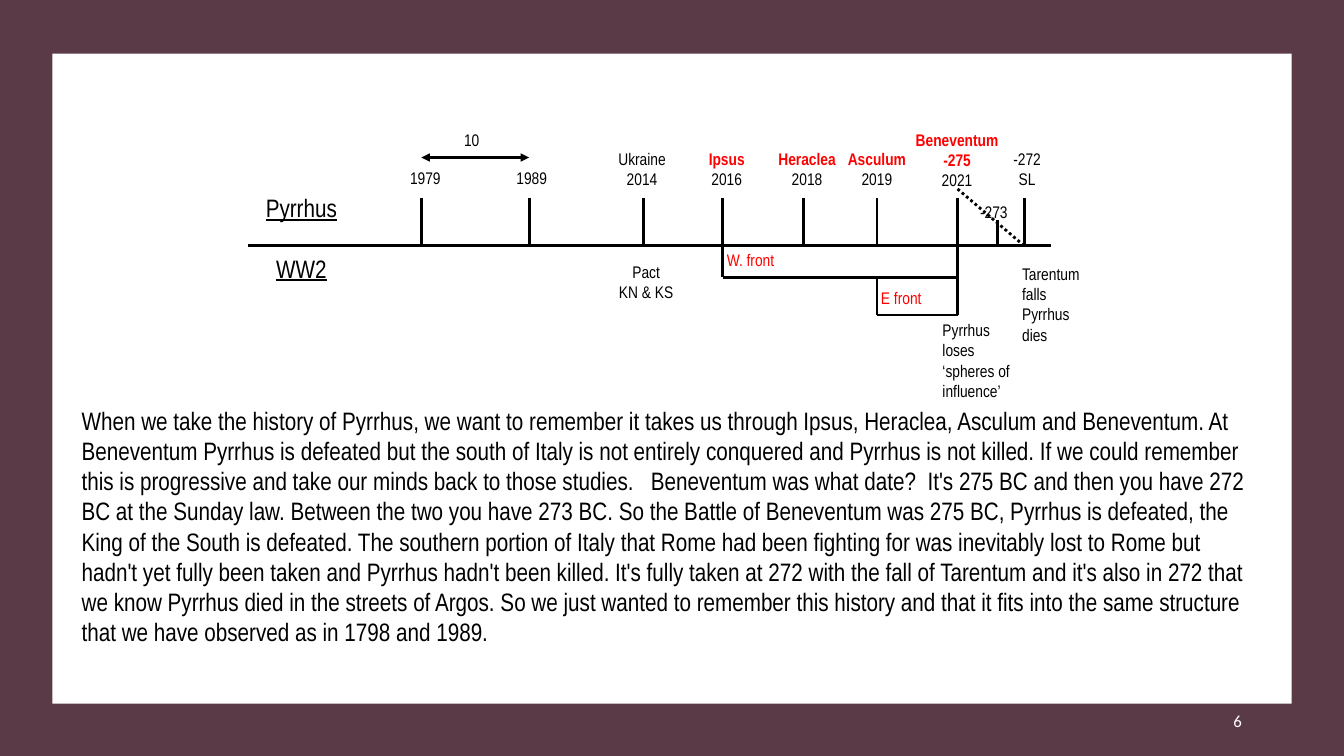
from lxml.etree import SubElement
from pptx import Presentation
from pptx.dml.color import RGBColor
from pptx.enum.dml import MSO_LINE
from pptx.enum.shapes import MSO_CONNECTOR, MSO_SHAPE
from pptx.enum.text import MSO_ANCHOR, PP_ALIGN
from pptx.oxml.ns import qn
from pptx.util import Inches, Pt

BLACK, WHITE, RED, PLUM = "000000", "FFFFFF", "FF0000", "5B3A47"

presentation = Presentation()
presentation.slide_width = Inches(13.33)
presentation.slide_height = Inches(7.5)
slide = presentation.slides.add_slide(presentation.slide_layouts[6])
column = presentation.slide_width / 200
row = presentation.slide_height / 120


def add_text(text, left, top, width, height, size=12, color=BLACK, font="Arial Narrow",
             align=PP_ALIGN.CENTER, anchor=MSO_ANCHOR.TOP, inset=(0.6, 0.6),
             red_lines=0, underline=False, gap=0):
    box = slide.shapes.add_textbox(int(left * column), int(top * row),
                                   int(width * column), int(height * row))
    frame = box.text_frame
    frame.word_wrap = True
    frame.vertical_anchor = anchor
    frame.margin_left = frame.margin_right = int(inset[0] * column)
    frame.margin_top = frame.margin_bottom = int(inset[1] * row)
    for index, line in enumerate(text.split("\n")):
        paragraph = frame.paragraphs[0] if index == 0 else frame.add_paragraph()
        paragraph.alignment = align
        paragraph.space_before = Pt(gap if index else 0)
        run = paragraph.add_run()
        run.text = line
        run.font.name = font
        run.font.size = Pt(size)
        run.font.bold = index < red_lines
        run.font.underline = underline
        run.font.color.rgb = RGBColor.from_string(RED if index < red_lines else color)


def add_line(start_x, start_y, end_x, end_y, dash=None, arrows=False):
    connector = slide.shapes.add_connector(
        MSO_CONNECTOR.STRAIGHT, int(start_x * column), int(start_y * row),
        int(end_x * column), int(end_y * row))
    connector.line.color.rgb = RGBColor.from_string(BLACK)
    connector.line.width = Pt(2)
    if dash:
        connector.line.dash_style = dash
    if arrows:
        for end in ("a:headEnd", "a:tailEnd"):
            SubElement(connector._element.spPr.find(qn("a:ln")), qn(end), type="triangle")
    SubElement(connector._element.spPr, qn("a:effectLst"))


panels = [(0, 0, 200, 120, PLUM), (7.8, 8.5, 184.4, 103.2, WHITE)]
for left, top, width, height, color in panels:
    panel = slide.shapes.add_shape(MSO_SHAPE.RECTANGLE, int(left * column), int(top * row),
                                   int(width * column), int(height * row))
    panel.shadow.inherit = False
    panel.fill.solid()
    panel.fill.fore_color.rgb = RGBColor.from_string(color)
    panel.line.fill.background()

add_text("6", 141.3, 111.2, 45, 6.4, color=WHITE, font="Calibri", align=PP_ALIGN.RIGHT,
         anchor=MSO_ANCHOR.MIDDLE, inset=(1.5, 0.8))

history = [
    "When we take the history of Pyrrhus, we want to remember it takes us through Ipsus, "
    "Heraclea, Asculum and Beneventum.",
    "At Beneventum Pyrrhus is defeated but the south of Italy is not entirely conquered "
    "and Pyrrhus is not killed.",
    "If we could remember this is progressive and take our minds back to those studies.   "
    "Beneventum was what date?  It's 275 BC and then you have 272 BC at the Sunday law.",
    "Between the two you have 273 BC.",
    "So the Battle of Beneventum was 275 BC, Pyrrhus is defeated, the King of the South is "
    "defeated.",
    "The southern portion of Italy that Rome had been fighting for was inevitably lost to "
    "Rome but hadn't yet fully been taken and Pyrrhus hadn't been killed.",
    "It's fully taken at 272 with the fall of Tarentum and it's also in 272 that we know "
    "Pyrrhus died in the streets of Argos.",
    "So we just wanted to remember this history and that it fits into the same structure "
    "that we have observed as in 1798 and 1989.",
]
add_text(" ".join(history), 10.65, 63.5, 178.65, 45.3, size=18, align=PP_ALIGN.LEFT,
         inset=(1.5, 0.8))

axis, label_bottom, tick_top = 39, 31, 31.5
west_front, east_front = 44, 50
add_line(36.9, axis, 156.45, axis)
add_text("Pyrrhus\nWW2", 36.9, 30, 15.9, 16.2, size=18, underline=True, gap=21.5)

x_1979, x_1989, x_ipsus, x_asculum, x_beneventum, x_law = 62.7, 78.75, 107.55, 130.5, 142.5, 152.4
events = [
    (x_1979, 58.8, 9, "1979", 0),
    (x_1989, 73.65, 10.95, "1989", 0),
    (95.7, 90.6, 9.9, "Ukraine\n2014", 0),
    (x_ipsus, 103.65, 9, "Ipsus\n2016", 1),
    (119.55, 114.6, 11, "Heraclea\n2018", 1),
    (x_asculum, 125.55, 9.9, "Asculum\n2019", 1),
    (x_beneventum, 135.45, 13.95, "Beneventum\n-275\n2021", 2),
    (x_law, 149.4, 6.9, "-272\nSL", 0),
]
for tick, left, width, label, red_lines in events:
    height = 3 * len(label.split("\n")) + 2
    add_text(label, left, label_bottom - height, width, height, red_lines=red_lines)
    add_line(tick, tick_top, tick, axis)

add_line(x_1979, 25, x_1989, 25, arrows=True)
add_text("10", 65.7, 20, 9, 5)

add_line(x_beneventum, 30, x_law, axis, dash=MSO_LINE.ROUND_DOT)
add_text("-273", 144.45, tick_top, 6.9, 4.5)
add_line(148.5, 35, 148.5, axis)

add_line(x_beneventum, axis, x_beneventum, east_front)
fronts = [("W. front", x_ipsus, axis, west_front, axis),
          ("E front", x_asculum, west_front, east_front, 45)]
for label, left, top, bottom, label_top in fronts:
    add_line(left, top, left, bottom)
    add_line(left, bottom, x_beneventum, bottom)
    add_text(label, left, label_top, 15, 5, color=RED, align=PP_ALIGN.LEFT)

add_text("Pact\nKN & KS", 88.65, 41, 15, 10)
notes = [("Pyrrhus loses ‘spheres of influence’", 138.75, 50),
         ("Tarentum falls\nPyrrhus dies", 150.6, 41.1)]
for note, left, top in notes:
    add_text(note, left, top, 13.65, 14.6, align=PP_ALIGN.LEFT, inset=(1.5, 0.8))

presentation.save("out.pptx")
